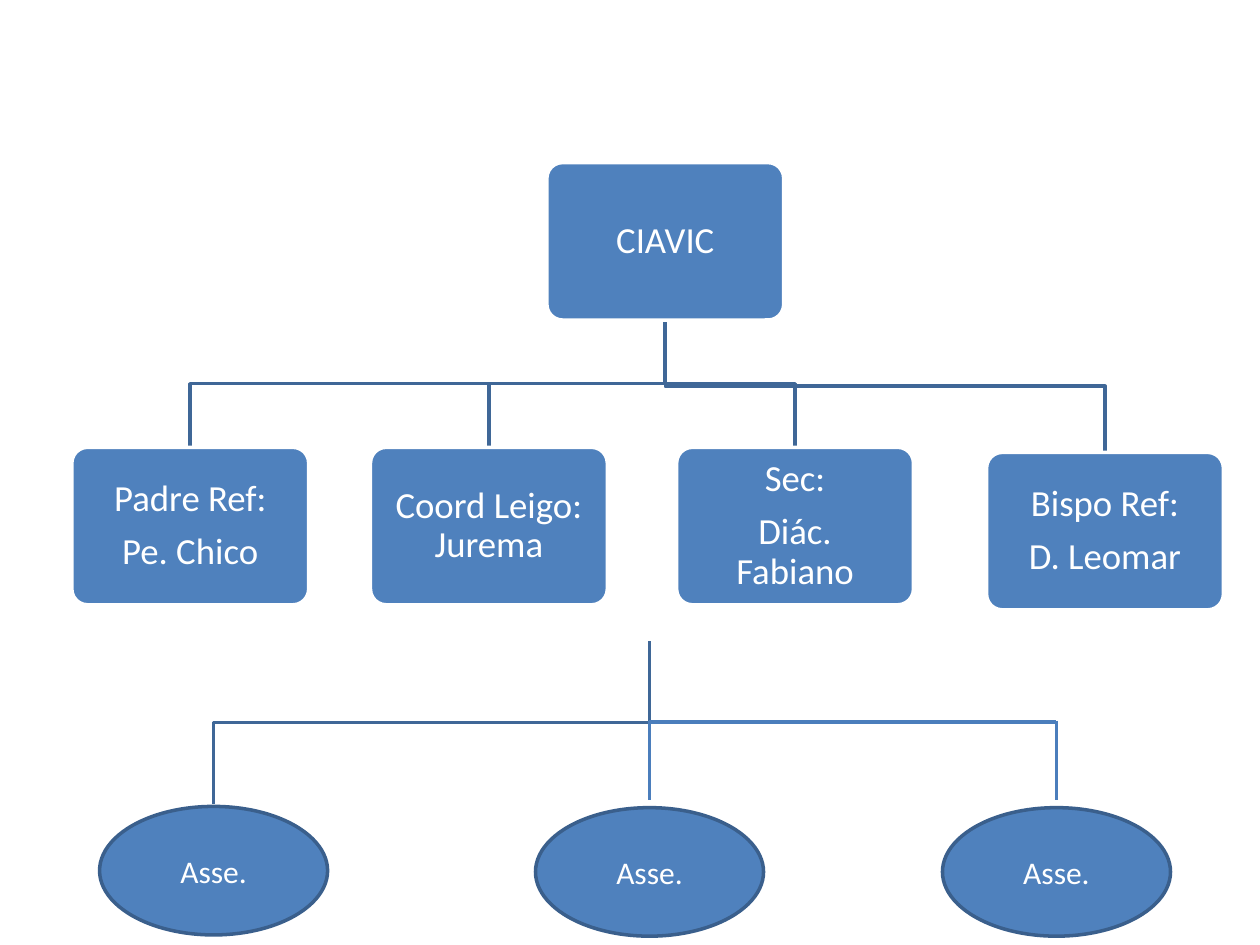
from dataclasses import dataclass

from lxml.etree import SubElement
from pptx import Presentation
from pptx.dml.color import RGBColor
from pptx.enum.shapes import MSO_CONNECTOR, MSO_SHAPE
from pptx.enum.text import MSO_ANCHOR, PP_ALIGN
from pptx.oxml.ns import qn
from pptx.util import Inches, Pt

FILL, WHITE = "4F81BD", "FFFFFF"
ELBOW, BRANCH, OUTLINE = "3F6797", "4B7EBC", "3A5F8C"
LINE_WIDTH = Pt(2)


@dataclass
class Node:
    lines: list[str]
    left: float
    top: float
    width: float = 1.88
    height: float = 1.25

    @property
    def center(self) -> float:
        return self.left + self.width / 2

    @property
    def bottom(self) -> float:
        return self.top + self.height


ROOT = Node(["CIAVIC"], 4.34, 1.29)
MEMBERS = [
    Node(["Padre Ref:", "Pe. Chico"], 0.57, 3.55),
    Node(["Coord Leigo: Jurema"], 2.94, 3.55),
    Node(["Sec:", "Diác. Fabiano"], 5.37, 3.55),
    Node(["Bispo Ref:", "D. Leomar"], 7.83, 3.59),
]
ADVISERS = [Node(["Asse."], left, top, 1.81, 1.02)
            for left, top in ((0.79, 6.4), (4.25, 6.41), (7.48, 6.41))]
BOX_PARAGRAPH = {"alignment": PP_ALIGN.CENTER, "line_spacing": 0.9, "space_after": Pt(7.35)}
OVAL_PARAGRAPH = {"alignment": PP_ALIGN.CENTER}


def rgb(color: str) -> RGBColor:
    return RGBColor.from_string(color)


def set_line(shape, color: str) -> None:
    shape.line.color.rgb = rgb(color)
    shape.line.width = LINE_WIDTH


def add_node(s, node: Node, kind, outline: str, size: float, inset: float, paragraph: dict):
    sp = s.shapes.add_shape(kind, Inches(node.left), Inches(node.top),
                            Inches(node.width), Inches(node.height))
    sp.shadow.inherit = False
    sp.fill.solid()
    sp.fill.fore_color.rgb = rgb(FILL)
    set_line(sp, outline)
    tf = sp.text_frame
    frame = {"word_wrap": True, "vertical_anchor": MSO_ANCHOR.MIDDLE}
    frame |= {f"margin_{side}": Inches(inset) for side in ("left", "right", "top", "bottom")}
    for name, value in frame.items():
        setattr(tf, name, value)
    for i, line in enumerate(node.lines):
        p = tf.paragraphs[0] if i == 0 else tf.add_paragraph()
        for name, value in paragraph.items():
            setattr(p, name, value)
        r = p.add_run()
        r.text = line
        for name, value in {"size": Pt(size), "name": "Calibri"}.items():
            setattr(r.font, name, value)
        r.font.color.rgb = rgb(WHITE)
    return sp


def add_elbow(s, x1: float, y1: float, x2: float, y2: float) -> None:
    """Draw a line that goes down, across at half height, and down again."""
    middle = (y1 + y2) / 2
    points = [(Inches(x), Inches(y)) for x, y in ((x1, middle), (x2, middle), (x2, y2))]
    builder = s.shapes.build_freeform(Inches(x1), Inches(y1), scale=1.0)
    builder.add_line_segments(points, close=False)
    sp = builder.convert_to_shape()
    sp.shadow.inherit = False
    sp.fill.background()
    set_line(sp, ELBOW)


def add_line(s, x1: float, y1: float, x2: float, y2: float) -> None:
    line = s.shapes.add_connector(MSO_CONNECTOR.STRAIGHT, *map(Inches, (x1, y1, x2, y2)))
    set_line(line, BRANCH)
    SubElement(line._element.spPr, qn("a:effectLst"))


def main() -> None:
    prs = Presentation()
    prs.slide_width, prs.slide_height = Inches(10), Inches(7.5)
    s = prs.slides.add_slide(prs.slide_layouts[6])

    for member in MEMBERS:
        add_elbow(s, ROOT.center, ROOT.bottom, member.center, member.top)
    for node in [ROOT, *MEMBERS]:
        box = add_node(s, node, MSO_SHAPE.ROUNDED_RECTANGLE, WHITE, 21, 0.13, BOX_PARAGRAPH)
        box.adjustments[0] = 0.1

    first, middle, last = (adviser.center for adviser in ADVISERS)
    branch_y, branch_end = 5.73, 6.35
    add_elbow(s, middle, 5.09, first, 6.38)
    add_line(s, middle, branch_y, last, branch_y)
    for x in (middle, last):
        add_line(s, x, branch_y - 0.01, x, branch_end)
    for adviser in ADVISERS:
        add_node(s, adviser, MSO_SHAPE.OVAL, OUTLINE, 18, 0.05, OVAL_PARAGRAPH)

    prs.save("out.pptx")


if __name__ == "__main__":
    main()
